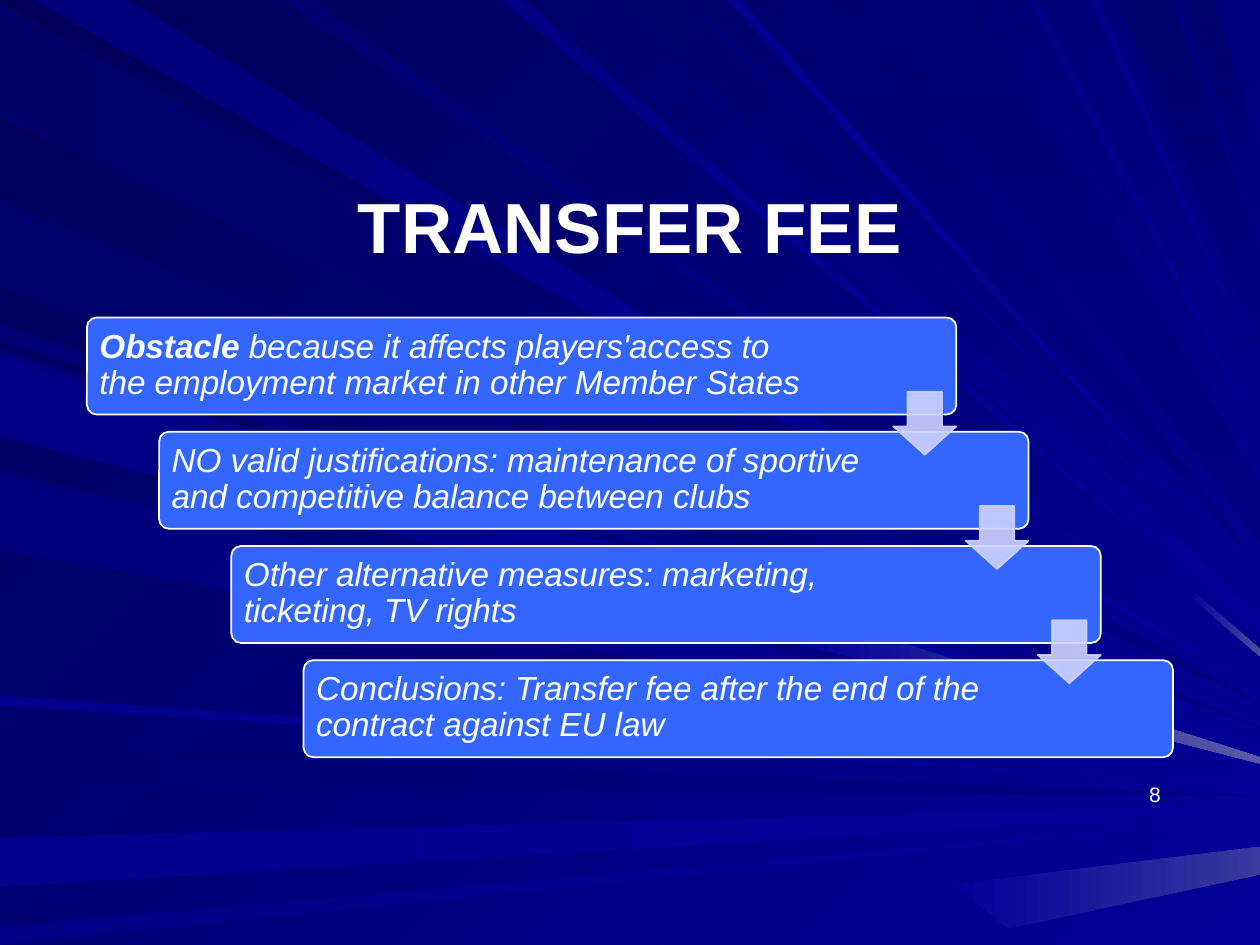
from typing import NamedTuple

from lxml.etree import SubElement
from pptx import Presentation
from pptx.dml.color import RGBColor
from pptx.enum.shapes import MSO_SHAPE
from pptx.enum.text import MSO_ANCHOR, PP_ALIGN
from pptx.oxml.ns import qn
from pptx.util import Inches, Pt

WHITE = "FFFFFF"
BOX_BLUE = "3366FF"
ARROW_LILAC = "CED3FF"
NIGHT = "000080"
ROYAL = "000099"
FONT = "Arial"
SLIDE_W, SLIDE_H = 10, 7.5
FOCUS_X, FOCUS_Y = 11.5, 6.35


class Ray(NamedTuple):
    """A beam from a stretch of the left or top edge towards the focus."""
    edge: str
    near: float
    far: float
    start: str
    end: str = ROYAL
    wide: bool = False


class Run(NamedTuple):
    text: str
    bold: bool = False
    italic: bool = False


RAYS = [
    Ray("left", 0.02, 0.93, "000069", NIGHT),
    Ray("top", 0.26, 1.01, "00007B"),
    Ray("left", 5.96, 6.23, "000071", NIGHT),
    Ray("left", 6.65, 7.04, "00008C", wide=True),
    Ray("left", 7.35, 7.5, "000085"),
    Ray("left", 2.58, 2.7, "000076"),
    Ray("left", 1.59, 2.28, "00006B", NIGHT),
    Ray("top", 3.98, 4.16, "000083"),
    Ray("top", 4.26, 4.92, "00006D", wide=True),
    Ray("top", 5.4, 5.52, "000073"),
    Ray("top", 6.06, 6.61, "000073", NIGHT),
    Ray("top", 8.87, 9.3, "00006B", NIGHT, wide=True),
    Ray("top", 9.39, 9.64, "00006D", NIGHT, wide=True),
    Ray("left", 2.78, 3.42, "00007E"),
    Ray("left", 3.74, 4.37, "00007B"),
    Ray("left", 5.52, 5.6, "00008E"),
    Ray("top", 2.25, 2.47, "000070"),
    Ray("top", 5.77, 5.88, "00008E"),
    Ray("top", 6.86, 7.7, "000073", NIGHT, wide=True),
    Ray("top", 7.85, 7.92, "000078"),
    Ray("top", 8.15, 8.24, "000085"),
    Ray("top", 8.65, 8.72, "00008A"),
    Ray("left", 2.83, 3.47, "000085"),
]

GLINTS = [
    ("39399E", [(10, 6.94), (10, 6.72), (7.56, 7.02), (8, 7.37)]),
    ("5A5AA6", [(10, 6.01), (6.37, 4.85), (6.33, 5.11), (10, 6.06)]),
    ("4A4AA1", [(10, 5.21), (10, 5.15), (9.47, 4.69), (9.44, 4.73)]),
]

STEPS = [
    [
        Run("Obstacle", bold=True, italic=True),
        Run(" because it affects players'access to the employment market in other Member States", italic=True),
    ],
    [Run("NO valid justifications: maintenance of sportive and competitive balance between clubs", italic=True)],
    [Run("Other alternative measures: marketing, ticketing, TV rights", italic=True)],
    [Run("Conclusions: Transfer fee after the end of the contract against EU law", italic=True)],
]

FIRST_LEFT, FIRST_TOP = 0.69, 2.52
STEP_X, STEP_Y = 1.72 / 3, 2.72 / 3
BOX_W, BOX_H = 6.9, 0.77
ARROW_SIZE = 0.5


def rgb(hex_color: str) -> RGBColor:
    return RGBColor.from_string(hex_color)


def set_fill(fill, start: str, end: str, angle: int) -> None:
    """Fill with a gradient at a clockwise angle, or solid if both ends match."""
    if start == end:
        fill.solid()
        fill.fore_color.rgb = rgb(start)
        return
    fill.gradient()
    fill.gradient_angle = -angle % 360
    for stop, color in zip(fill.gradient_stops, (start, end)):
        stop.color.rgb = rgb(color)


def add_polygon(s, points: list[tuple[float, float]], start: str, end: str, angle: int) -> None:
    first, *rest = [(Inches(x), Inches(y)) for x, y in points]
    builder = s.shapes.build_freeform(*first, scale=1.0)
    builder.add_line_segments(rest, close=True)
    sp = builder.convert_to_shape()
    sp.shadow.inherit = False
    sp.line.fill.background()
    set_fill(sp.fill, start, end, angle)


def exit_point(x: float, y: float) -> tuple[float, float]:
    """Where the line from (x, y) to the focus crosses the right edge."""
    return SLIDE_W, y + (FOCUS_Y - y) * (SLIDE_W - x) / (FOCUS_X - x)


def add_ray(s, ray: Ray) -> None:
    def on_edge(t: float) -> tuple[float, float]:
        return (0, t) if ray.edge == "left" else (t, 0)

    near, far = on_edge(ray.near), on_edge(ray.far)
    if ray.wide:
        tips = [exit_point(*far), exit_point(*near)]
    else:
        tips = [exit_point(*on_edge((ray.near + ray.far) / 2))]
    if ray.end == NIGHT:
        angle = 0 if ray.edge == "left" else 90
    else:
        angle = 0 if ray.edge == "left" and ray.near > 5 else 45
    add_polygon(s, [near, far, *tips], ray.start, ray.end, angle)


def add_preset(s, kind, left: float, top: float, width: float, height: float,
               adjustments: list[float], fill: str, line: str):
    sp = s.shapes.add_shape(kind, Inches(left), Inches(top), Inches(width), Inches(height))
    sp.shadow.inherit = False
    for i, value in enumerate(adjustments):
        sp.adjustments[i] = value
    set_fill(sp.fill, fill, fill, 0)
    sp.line.color.rgb = rgb(line)
    sp.line.width = Pt(1)
    return sp


def add_text(s, left: float, top: float, width: float, height: float, runs: list[Run],
             size: float, align=PP_ALIGN.LEFT, anchor=MSO_ANCHOR.MIDDLE):
    tf = s.shapes.add_textbox(Inches(left), Inches(top), Inches(width), Inches(height)).text_frame
    tf.word_wrap = True
    tf.vertical_anchor = anchor
    p = tf.paragraphs[0]
    p.alignment = align
    for run in runs:
        r = p.add_run()
        r.text = run.text
        r.font.name = FONT
        r.font.size = Pt(size)
        r.font.bold = run.bold
        r.font.italic = run.italic
        r.font.color.rgb = rgb(WHITE)
    return tf


def add_step(s, runs: list[Run], left: float, top: float) -> None:
    add_preset(s, MSO_SHAPE.ROUNDED_RECTANGLE, left, top, BOX_W, BOX_H, [0.1], BOX_BLUE, WHITE)
    tf = add_text(s, left + 0.02, top + 0.02, 5.8, 0.72, runs, 19)
    tf.margin_left = tf.margin_right = tf.margin_top = tf.margin_bottom = Inches(0.08)
    tf.paragraphs[0].line_spacing = 0.9


def add_arrow(s, left: float, top: float) -> None:
    sp = add_preset(s, MSO_SHAPE.DOWN_ARROW, left, top, ARROW_SIZE, ARROW_SIZE,
                    [0.55, 0.45], ARROW_LILAC, ARROW_LILAC)
    for color in sp._element.spPr.iter(qn("a:srgbClr")):
        SubElement(color, qn("a:alpha"), val="90000")


def main() -> None:
    prs = Presentation()
    prs.slide_width, prs.slide_height = Inches(SLIDE_W), Inches(SLIDE_H)
    s = prs.slides.add_slide(prs.slide_layouts[6])
    set_fill(s.background.fill, "000058", ROYAL, 45)
    for ray in RAYS:
        add_ray(s, ray)
    for color, points in GLINTS:
        add_polygon(s, points, ROYAL, color, 0)

    add_text(s, 0.69, 1.24, 8.62, 1.09, [Run("TRANSFER FEE", bold=True)], 40.5, PP_ALIGN.CENTER)
    corners = [(FIRST_LEFT + i * STEP_X, FIRST_TOP + i * STEP_Y) for i in range(len(STEPS))]
    for runs, (left, top) in zip(STEPS, corners):
        add_step(s, runs, left, top)
    for left, top in corners[:-1]:
        add_arrow(s, left + BOX_W - ARROW_SIZE, top + 0.59)
    add_text(s, 7.06, 6.15, 2.25, 0.3, [Run("8")], 12, PP_ALIGN.RIGHT, MSO_ANCHOR.BOTTOM)
    prs.save("out.pptx")


if __name__ == "__main__":
    main()
